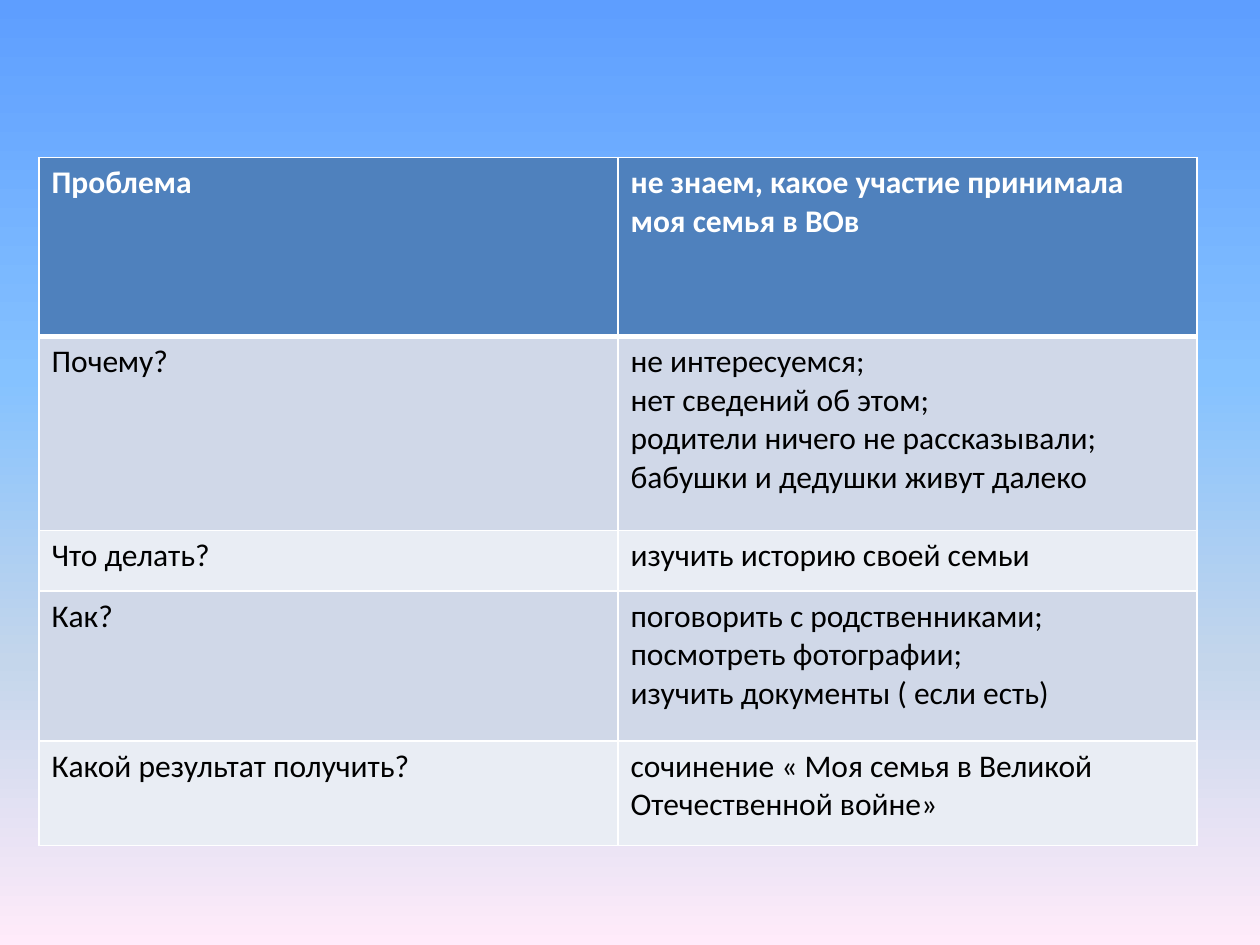
from dataclasses import dataclass

from lxml import etree
from pptx import Presentation
from pptx.dml.color import RGBColor
from pptx.oxml.ns import qn
from pptx.slide import Slide
from pptx.table import _Cell
from pptx.util import Inches, Pt


@dataclass(frozen=True)
class Theme:
    font: str = "Calibri"
    size: int = 18
    head: str = "4F81BD"
    bands: tuple[str, str] = ("D0D8E8", "E9EDF4")
    light: str = "FFFFFF"
    dark: str = "000000"
    line: int = 1
    rule: int = 3
    sky: tuple[tuple[int, str], ...] = (
        (0, "5E9EFF"), (40, "85C2FF"), (70, "C4D6EB"), (100, "FFEBFA"))


@dataclass(frozen=True)
class Row:
    height: float
    label: str
    notes: tuple[str, ...]


THEME = Theme()
WIDTH, HEIGHT = 10, 7.5
LEFT, TOP, SPAN = 0.031 * WIDTH, HEIGHT / 6, 0.919 * WIDTH
ROWS = (
    Row(1.42, "Проблема", ("не знаем, какое участие принимала моя семья в ВОв",)),
    Row(1.54, "Почему?", (
        "не интересуемся;",
        "нет сведений об этом;",
        "родители ничего не рассказывали;",
        "бабушки и дедушки живут далеко",
    )),
    Row(0.48, "Что делать?", ("изучить историю своей семьи",)),
    Row(1.19, "Как?", (
        "поговорить с родственниками;",
        "посмотреть фотографии;",
        "изучить документы ( если есть)",
    )),
    Row(0.83, "Какой результат получить?",
        ("сочинение « Моя семья в Великой Отечественной войне»",)),
)


def add_color(parent: etree._Element, color: str) -> None:
    etree.SubElement(parent, qn("a:srgbClr"), val=color)


def paint_sky(slide: Slide) -> None:
    fill = slide.background.fill
    fill.gradient()
    fill.gradient_angle = 270
    stops = slide.element.find(".//" + qn("a:gsLst"))
    for stop in list(stops):
        stops.remove(stop)
    for share, color in THEME.sky:
        add_color(etree.SubElement(stops, qn("a:gs"), pos=str(share * 1000)), color)


def add_edges(cell: _Cell, top: int, bottom: int) -> None:
    props = cell._tc.get_or_add_tcPr()
    edges = {"lnL": THEME.line, "lnR": THEME.line, "lnT": top, "lnB": bottom}
    for name, width in edges.items():
        edge = etree.SubElement(props, qn(f"a:{name}"), w=str(Pt(width)))
        add_color(etree.SubElement(edge, qn("a:solidFill")), THEME.light)


def fill_cell(cell: _Cell, text: str, index: int) -> None:
    """Style a cell by its row index, where row 0 is the header."""
    head = index == 0
    add_edges(cell,
              top=THEME.rule if index == 1 else THEME.line,
              bottom=THEME.rule if head else THEME.line)
    cell.fill.solid()
    cell.fill.fore_color.rgb = RGBColor.from_string(
        THEME.head if head else THEME.bands[(index - 1) % 2])
    cell.text = text
    for para in cell.text_frame.paragraphs:
        para.font.name = THEME.font
        para.font.size = Pt(THEME.size)
        para.font.bold = head
        para.font.color.rgb = RGBColor.from_string(THEME.light if head else THEME.dark)


def add_plan(slide: Slide, rows: tuple[Row, ...]) -> None:
    height = sum(row.height for row in rows)
    table = slide.shapes.add_table(
        len(rows), 2, Inches(LEFT), Inches(TOP), Inches(SPAN), Inches(height)).table
    for index, row in enumerate(rows):
        table.rows[index].height = Inches(row.height)
        for col, text in enumerate((row.label, "\n".join(row.notes))):
            fill_cell(table.cell(index, col), text, index)


def main() -> None:
    deck = Presentation()
    deck.slide_width, deck.slide_height = Inches(WIDTH), Inches(HEIGHT)
    blank = deck.slide_layouts.get_by_name("Blank")
    slide = deck.slides.add_slide(blank)
    paint_sky(slide)
    add_plan(slide, ROWS)
    deck.save("out.pptx")


if __name__ == "__main__":
    main()
